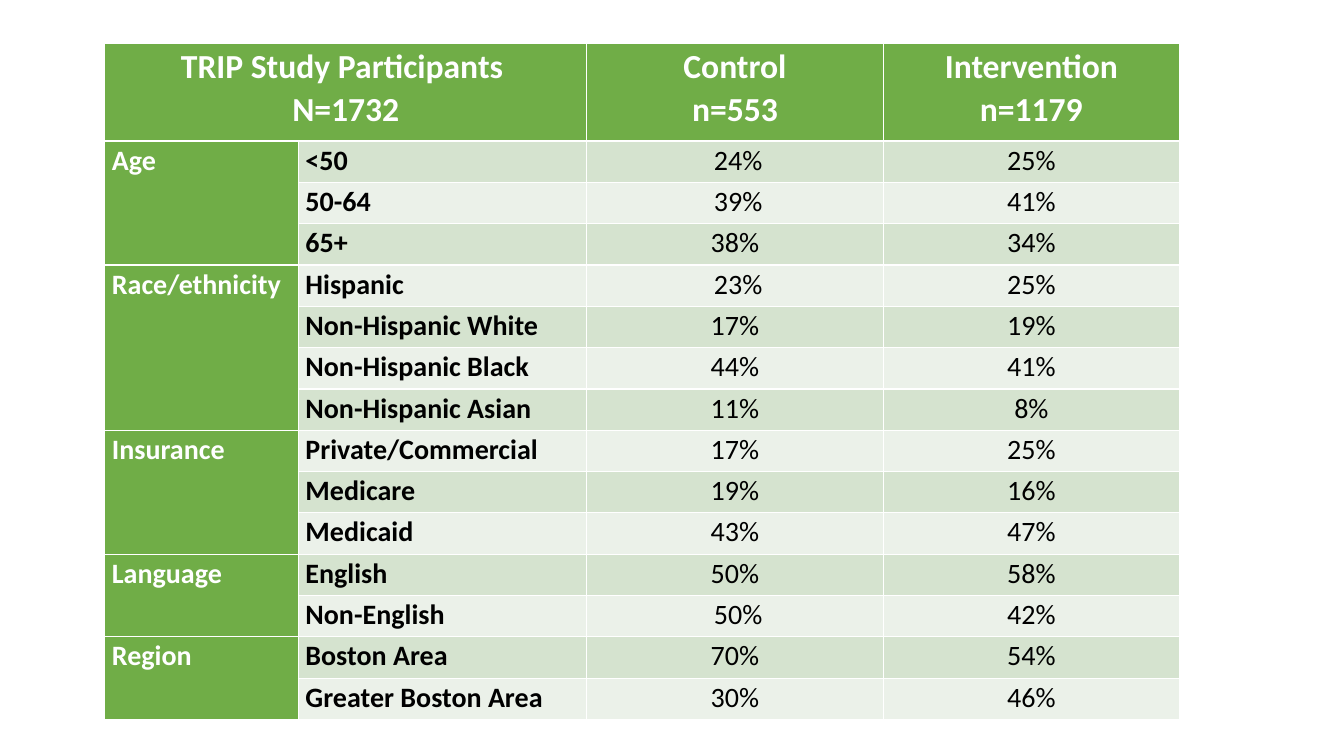
from pptx import Presentation
from pptx.dml.color import RGBColor
from pptx.enum.text import PP_ALIGN
from pptx.util import Inches, Pt

COLORS = {
    "header": "70AD47",
    "band_dark": "D5E3CF",
    "band_light": "EBF1E9",
    "white": "FFFFFF",
    "black": "000000",
}
HEADINGS = {
    0: "TRIP Study Participants \nN=1732",
    2: "Control\nn=553",
    3: "Intervention\nn=1179",
}
GROUPS = {
    "Age": [("<50", " 24%", "25%"), ("50-64", " 39%", "41%"), ("65+", "38%", "34%")],
    "Race/ethnicity": [
        ("Hispanic", " 23%", "25%"),
        ("Non-Hispanic White", "17%", "19%"),
        ("Non-Hispanic Black", "44%", "41%"),
        ("Non-Hispanic Asian", "11%", "8%"),
    ],
    "Insurance": [
        ("Private/Commercial", "17%", "25%"),
        ("Medicare", "19%", "16%"),
        ("Medicaid", "43%", "47%"),
    ],
    "Language": [("English", "50%", "58%"), ("Non-English", " 50%", "42%")],
    "Region": [("Boston Area", "70%", "54%"), ("Greater Boston Area", "30%", "46%")],
}
COLUMN_WIDTHS = [1.92, 2.86, 2.94, 2.94]
HEADER_HEIGHT, ROW_HEIGHT = 0.97, 0.41


def fill_cell(cell, text, fill, color="black", size=20, bold=False, align=PP_ALIGN.LEFT):
    cell.fill.solid()
    cell.fill.fore_color.rgb = RGBColor.from_string(COLORS[fill])
    cell.margin_left = cell.margin_right = Inches(0.07)
    cell.margin_top = cell.margin_bottom = 0
    cell.text_frame.text = text
    for para in cell.text_frame.paragraphs:
        para.alignment = align
        para.line_spacing = 1.07
        para.font.size = Pt(size)
        for span in para.runs:
            span.font.name = "Calibri"
            span.font.size = Pt(size)
            span.font.bold = bold
            span.font.color.rgb = RGBColor.from_string(COLORS[color])


deck = Presentation()
deck.slide_width, deck.slide_height = Inches(13.33), Inches(7.5)
page = deck.slides.add_slide(deck.slide_layouts[6])

row_count = sum(len(rows) for rows in GROUPS.values())
table = page.shapes.add_table(
    row_count + 1, len(COLUMN_WIDTHS), Inches(1.04), Inches(0.43),
    Inches(sum(COLUMN_WIDTHS)), Inches(HEADER_HEIGHT + row_count * ROW_HEIGHT),
).table
for column, width in zip(table.columns, COLUMN_WIDTHS):
    column.width = Inches(width)
for row in table.rows:
    row.height = Inches(ROW_HEIGHT)
table.rows[0].height = Inches(HEADER_HEIGHT)

# Header row
table.cell(0, 0).merge(table.cell(0, 1))
for column, heading in HEADINGS.items():
    fill_cell(table.cell(0, column), heading, "header", "white", 24, True, PP_ALIGN.CENTER)

# One merged label per group, then banded rows beside it
top = 1
for group, rows in GROUPS.items():
    table.cell(top, 0).merge(table.cell(top + len(rows) - 1, 0))
    fill_cell(table.cell(top, 0), group, "header", "white", bold=True)
    for index, (label, *shares) in enumerate(rows, start=top):
        band = "band_dark" if index % 2 else "band_light"
        fill_cell(table.cell(index, 1), label, band, bold=True)
        for column, share in enumerate(shares, start=2):
            fill_cell(table.cell(index, column), share, band, align=PP_ALIGN.CENTER)
    top += len(rows)

deck.save("out.pptx")
